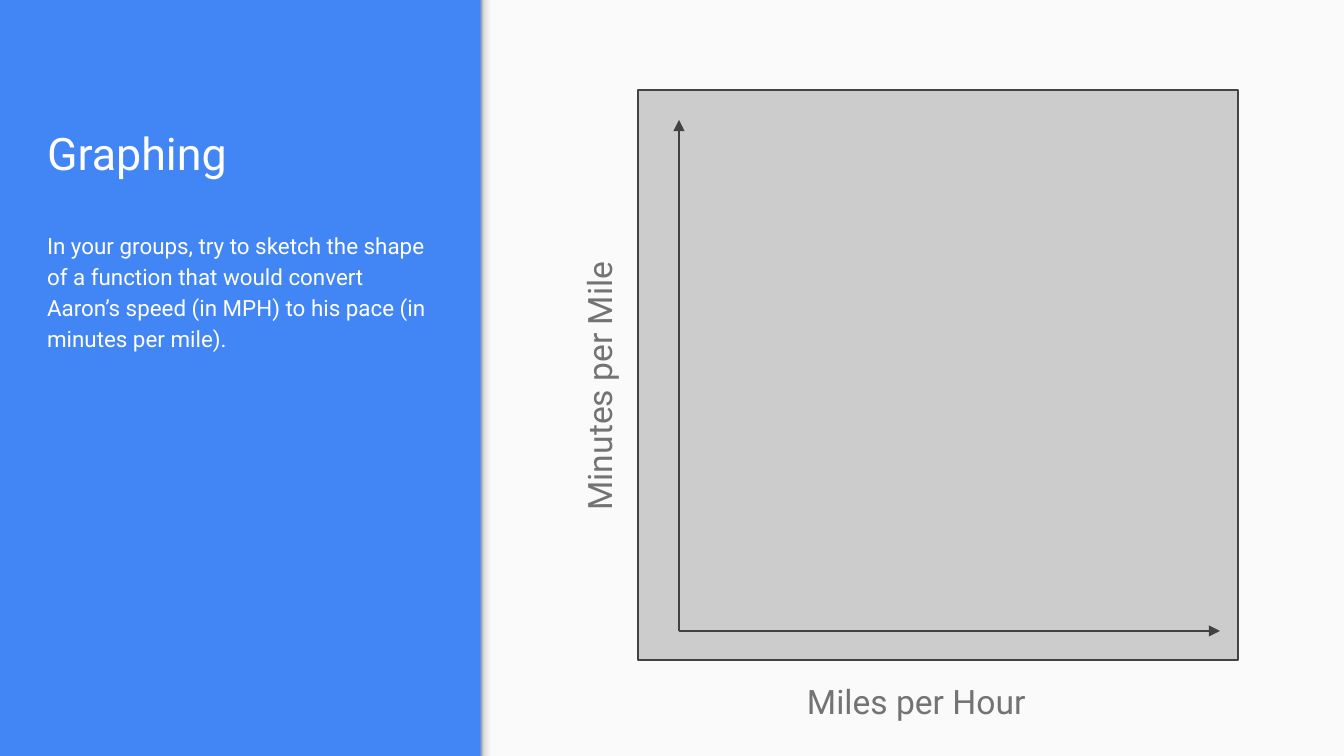
from lxml import etree
from pptx import Presentation
from pptx.dml.color import RGBColor
from pptx.enum import shapes, text
from pptx.oxml.ns import qn
from pptx.util import Emu, Pt

# Content
TITLE = "Graphing"
TASK = ("In your groups, try to sketch the shape of a function that would convert "
        "Aaron’s speed (in MPH) to his pace (in minutes per mile).")
X_LABEL = "Miles per Hour"
Y_LABEL = "Minutes per Mile"

# Style
FONT = "Roboto"
BLUE = RGBColor(0x42, 0x85, 0xF4)
WHITE = RGBColor(0xFF, 0xFF, 0xFF)
PANEL = RGBColor(0xFA, 0xFA, 0xFA)
PLOT = RGBColor(0xCC, 0xCC, 0xCC)
DARK = RGBColor(0x42, 0x42, 0x42)
GREY = RGBColor(0x73, 0x73, 0x73)
EDGE_STOPS = [(0, "999999"), (20, "DEDEDE"), (64, "F9F9F9"), (100, "F9F9F9")]

# Geometry in px
WIDTH, HEIGHT = 1344, 756
SPLIT = 481
EDGE_WIDTH = 16
INSET = 13
ORIGIN = (679, 631)
AXIS_ENDS = [(1220, 631), (679, 120)]


def px(value):
    return Emu(round(value * 914400 / 134.4))


def place(box, left, top, width, height):
    box.left, box.top, box.width, box.height = map(px, (left, top, width, height))


def add_rectangle(page, left, top, width, height, fill, line=None):
    box = page.shapes.add_shape(shapes.MSO_SHAPE.RECTANGLE,
                                *map(px, (left, top, width, height)))
    box.shadow.inherit = False
    box.fill.solid()
    box.fill.fore_color.rgb = fill
    if line is None:
        box.line.fill.background()
    else:
        box.line.color.rgb = line
        box.line.width = Pt(0.75)
    return box


def shade_edge(box):
    box.fill.gradient()
    box.fill.gradient_angle = 0
    stops = box._element.spPr.find(".//" + qn("a:gsLst"))
    for stop in list(stops):
        stops.remove(stop)
    for position, color in EDGE_STOPS:
        stop = etree.SubElement(stops, qn("a:gs"), pos=str(position * 1000))
        etree.SubElement(stop, qn("a:srgbClr"), val=color)


def add_arrow(page, start, end):
    arrow = page.shapes.add_connector(shapes.MSO_CONNECTOR.STRAIGHT,
                                      *map(px, start + end))
    arrow.line.color.rgb = DARK
    arrow.line.width = Pt(0.75)
    etree.SubElement(arrow.line._get_or_add_ln(), qn("a:tailEnd"), type="triangle")
    etree.SubElement(arrow._element.spPr, qn("a:effectLst"))


def write(box, words, size, color, anchor=text.MSO_ANCHOR.TOP, spacing=1.0, before=0):
    frame = box.text_frame
    frame.word_wrap = True
    frame.auto_size = text.MSO_AUTO_SIZE.NONE
    frame.vertical_anchor = anchor
    frame.margin_left = frame.margin_right = px(INSET)
    frame.margin_top = frame.margin_bottom = px(INSET)
    para = frame.paragraphs[0]
    para.alignment = text.PP_ALIGN.LEFT
    para.line_spacing = spacing
    para.space_before = Pt(before)
    span = para.add_run()
    span.text = words
    span.font.name = FONT
    span.font.size = Pt(size)
    span.font.color.rgb = color
    return para


def add_label(page, words, left, top, width, height, rotation=0):
    box = page.shapes.add_textbox(*map(px, (left, top, width, height)))
    box.rotation = rotation
    write(box, words, size=18, color=GREY)


def main():
    deck = Presentation()
    deck.slide_width, deck.slide_height = px(WIDTH), px(HEIGHT)
    page = deck.slides.add_slide(deck.slide_layouts[1])
    page.background.fill.solid()
    page.background.fill.fore_color.rgb = BLUE

    # Light panel with a shaded edge
    add_rectangle(page, SPLIT, 0, WIDTH - SPLIT, HEIGHT, PANEL)
    shade_edge(add_rectangle(page, SPLIT, 0, EDGE_WIDTH, HEIGHT, PANEL))

    # Title and task
    title, body = page.placeholders
    place(title, 34, 52, 413, 140)
    write(title, TITLE, size=24, color=WHITE, anchor=text.MSO_ANCHOR.BOTTOM)
    place(body, 34, 215, 413, 465)
    para = write(body, TASK, size=12, color=WHITE, spacing=1.15, before=16)
    properties = para._p.get_or_add_pPr()
    properties.set("marL", "0")
    properties.set("indent", "0")
    etree.SubElement(properties, qn("a:buNone"))

    # Empty graph with axes
    add_rectangle(page, 638, 90, 600, 570, PLOT, line=DARK)
    for end in AXIS_ENDS:
        add_arrow(page, ORIGIN, end)

    # Axis labels
    add_label(page, X_LABEL, 794, 668, 341, 30)
    add_label(page, Y_LABEL, 375, 281, 433, 52, rotation=270)

    deck.save("out.pptx")


if __name__ == "__main__":
    main()
